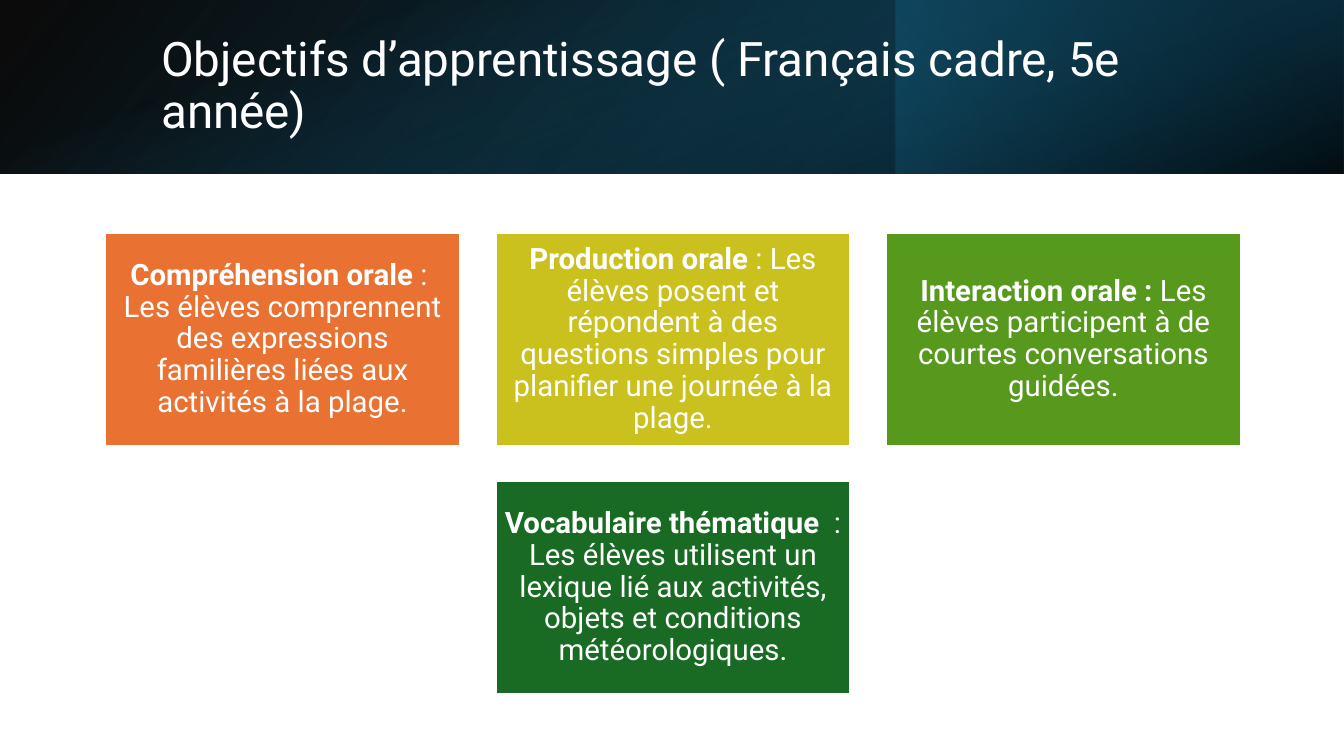
from lxml.etree import SubElement
from pptx import Presentation
from pptx.dml.color import RGBColor
from pptx.enum.shapes import MSO_SHAPE
from pptx.enum.text import MSO_ANCHOR, MSO_AUTO_SIZE, PP_ALIGN
from pptx.oxml.ns import qn
from pptx.util import Cm, Pt

WHITE = RGBColor(0xFF, 0xFF, 0xFF)
BLACK = RGBColor(0x00, 0x00, 0x00)
BLUE = RGBColor(0x15, 0x60, 0x82)
NAVY = RGBColor(0x10, 0x48, 0x62)
DEEP = RGBColor(0x0B, 0x30, 0x41)
ORANGE = RGBColor(0xE9, 0x71, 0x32)
YELLOW = RGBColor(0xCB, 0xC1, 0x1E)
LIME = RGBColor(0x56, 0x99, 0x1D)
GREEN = RGBColor(0x19, 0x6B, 0x24)
FONT = "Roboto"

WIDE, HIGH = 33.87, 19.05
BAND = 4.37
CARD_W, CARD_H, GAP = 8.94, 5.36, 0.9

TITLE = "Objectifs d’apprentissage ( Français cadre, 5e année)"
ROWS = [
    [
        (ORANGE, "Compréhension orale",
         " :  Les élèves comprennent des expressions familières liées aux "
         "activités à la plage."),
        (YELLOW, "Production orale",
         " : Les élèves posent et répondent à des questions simples pour "
         "planifier une journée à la plage."),
        (LIME, "Interaction orale : ",
         "Les élèves participent à de courtes conversations guidées."),
    ],
    [
        (GREEN, "Vocabulaire thématique",
         "  : Les élèves utilisent un lexique lié aux activités, objets et "
         "conditions météorologiques."),
    ],
]


def add_box(slide, x, y, w, h):
    box = slide.shapes.add_shape(MSO_SHAPE.RECTANGLE, Cm(x), Cm(y), Cm(w), Cm(h))
    box.shadow.inherit = False
    return box


def add_run(para, text, size, bold=False):
    run = para.add_run()
    run.text = text
    run.font.name = FONT
    run.font.size = Pt(size)
    run.font.bold = bold
    run.font.color.rgb = WHITE


def shade(box, angle, stops):
    """Fill with (position, colour, opacity) stops, both shares in percent;
    the angle runs clockwise."""
    box.line.fill.background()
    box.fill.gradient()
    box.fill.gradient_angle = 360 - angle
    for stop, (place, color, _) in zip(box.fill.gradient_stops, stops):
        stop.position = place / 100
        stop.color.rgb = color
    tints = box._element.spPr.iter(qn("a:srgbClr"))
    for tint, (_, _, alpha) in zip(tints, stops):
        SubElement(tint, qn("a:alpha")).set("val", str(alpha * 1000))


def add_band(slide, x, y, w, h):
    base = add_box(slide, x, y, w, h)
    base._element.spPr.find(qn("a:xfrm")).set("flipH", "1")
    shade(base, 140, [(0, BLACK, 96), (100, NAVY, 100)])

    side = add_box(slide, x + w * 2 / 3, y, w / 3, h)
    side.rotation = 180
    shade(side, 320, [(19, DEEP, 68), (100, BLUE, 79)])

    shift = (w - h) / 2
    veil = add_box(slide, x + shift, y - shift, h, w)
    veil.rotation = 90
    shade(veil, 340, [(23, BLUE, 0), (99, BLACK, 74)])


def add_title(slide, x, y, w, h):
    title = slide.shapes.title
    slide.shapes._spTree.append(title._element)  # in front of the band
    title.left, title.top, title.width, title.height = Cm(x), Cm(y), Cm(w), Cm(h)
    frame = title.text_frame
    frame.word_wrap = True
    frame.auto_size = MSO_AUTO_SIZE.NONE
    frame.vertical_anchor = MSO_ANCHOR.MIDDLE
    para = frame.paragraphs[0]
    para.alignment = PP_ALIGN.LEFT
    para.line_spacing = 0.9
    add_run(para, TITLE, 34)


def add_card(slide, x, y, color, head, body):
    card = add_box(slide, x, y, CARD_W, CARD_H)
    card.fill.solid()
    card.fill.fore_color.rgb = color
    card.line.color.rgb = WHITE
    card.line.width = Pt(1.5)
    frame = card.text_frame
    frame.word_wrap = True
    frame.vertical_anchor = MSO_ANCHOR.MIDDLE
    frame.margin_left = frame.margin_right = Cm(0.22)
    frame.margin_top = frame.margin_bottom = Cm(0.22)
    para = frame.paragraphs[0]
    para.alignment = PP_ALIGN.CENTER
    para.line_spacing = 0.9
    add_run(para, head, 21, True)
    add_run(para, body, 21)


def add_cards(slide, x, y, w):
    """Stack the rows of cards, each row centred in the width."""
    for i, row in enumerate(ROWS):
        span = len(row) * (CARD_W + GAP) - GAP
        left = x + (w - span) / 2
        for j, card in enumerate(row):
            add_card(slide, left + j * (CARD_W + GAP),
                     y + i * (CARD_H + GAP), *card)


def main():
    deck = Presentation()
    deck.slide_width, deck.slide_height = Cm(WIDE), Cm(HIGH)
    slide = deck.slides.add_slide(deck.slide_layouts[5])
    add_band(slide, 0, 0, WIDE, BAND)
    add_title(slide, 3.81, 0.97, 27.89, 2.44)
    add_cards(slide, 2.65, 5.87, 28.62)
    deck.save("out.pptx")


if __name__ == "__main__":
    main()
